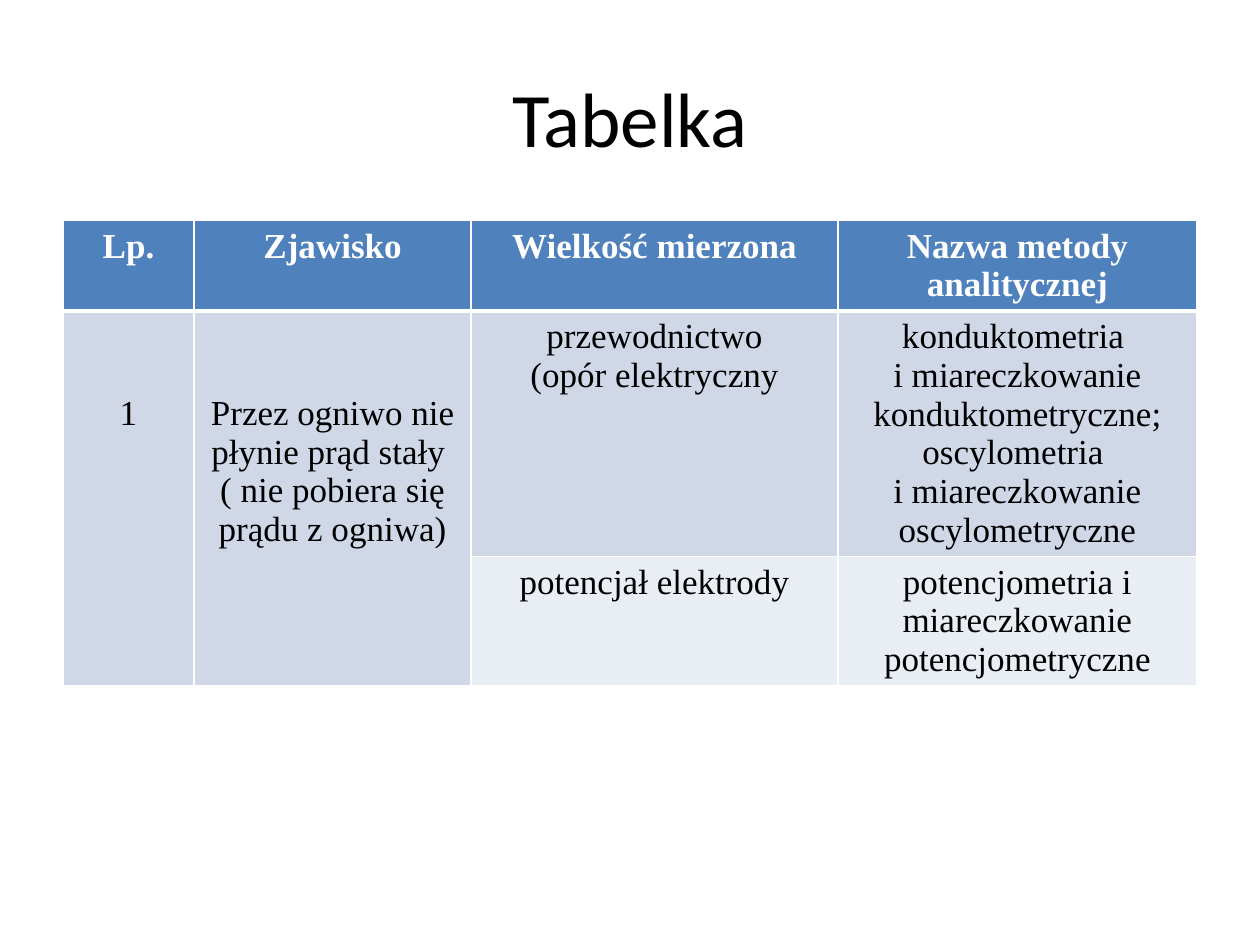
from lxml import etree
from pptx import Presentation
from pptx.dml.color import RGBColor
from pptx.enum import text
from pptx.oxml import ns
from pptx.util import Inches, Pt

WHITE, BLACK = "FFFFFF", "000000"
HEADER_BLUE, BAND_DARK, BAND_LIGHT = "4F81BD", "D0D8E8", "E9EDF4"
COLUMN_WIDTHS = [1.04, 2.2, 2.91, 2.85]
ROW_HEIGHTS = [0.71, 1.95, 1.02]
LOWERED_MARGIN = 0.66
HEADINGS = ["Lp.", "Zjawisko", "Wielkość mierzona", "Nazwa metody analitycznej"]
FIRST_METHOD = [
    ["1"],
    ["Przez ogniwo nie płynie prąd stały ", "( nie pobiera się prądu z ogniwa)"],
    ["przewodnictwo", "(opór elektryczny"],
    ["konduktometria ", "i miareczkowanie konduktometryczne; oscylometria ",
     "i miareczkowanie oscylometryczne"],
]
SECOND_METHOD = [
    ["potencjał elektrody"],
    ["potencjometria i miareczkowanie potencjometryczne"],
]


def colour(value):
    """Turn a hex string into a colour."""
    return RGBColor.from_string(value)


def add_span(para, words, font, size, ink, bold=False):
    """Add one centred, formatted run to a paragraph."""
    para.alignment = text.PP_ALIGN.CENTER
    span = para.add_run()
    span.text = words
    span.font.name = font
    span.font.size = Pt(size)
    span.font.bold = bold
    span.font.color.rgb = colour(ink)


def set_borders(cell, bottom=1):
    """Draw white lines around a cell, with a chosen bottom width."""
    properties = cell._tc.get_or_add_tcPr()
    widths = {"a:lnL": 1, "a:lnR": 1, "a:lnT": 1, "a:lnB": bottom}
    for position, (tag, width) in enumerate(widths.items()):
        line = etree.Element(ns.qn(tag), w=str(Pt(width)))
        fill = etree.SubElement(line, ns.qn("a:solidFill"))
        etree.SubElement(fill, ns.qn("a:srgbClr"), val=WHITE)
        properties.insert(position, line)


def fill_cell(cell, lines, shade, header=False):
    """Shade a cell, border it and write its paragraphs."""
    cell.fill.solid()
    cell.fill.fore_color.rgb = colour(shade)
    set_borders(cell, 3 if header else 1)
    frame = cell.text_frame
    for number, words in enumerate(lines):
        para = frame.add_paragraph() if number else frame.paragraphs[0]
        add_span(para, words, "Times New Roman", 20, WHITE if header else BLACK, header)


def add_title(page, words):
    """Place and write the slide title."""
    box = page.shapes.title
    box.left, box.top = Inches(0.5), Inches(0.3)
    box.width, box.height = Inches(9), Inches(1.25)
    box.text_frame.vertical_anchor = text.MSO_ANCHOR.MIDDLE
    add_span(box.text_frame.paragraphs[0], words, "Calibri", 44, BLACK)


def add_methods_table(page):
    """Build the table of phenomena, quantities and methods."""
    frame = page.shapes.add_table(
        len(ROW_HEIGHTS), len(COLUMN_WIDTHS), Inches(0.5), Inches(1.75),
        Inches(sum(COLUMN_WIDTHS)), Inches(sum(ROW_HEIGHTS)))
    table = frame.table
    for column, width in zip(table.columns, COLUMN_WIDTHS):
        column.width = Inches(width)
    for row, height in zip(table.rows, ROW_HEIGHTS):
        row.height = Inches(height)
    for index, heading in enumerate(HEADINGS):
        fill_cell(table.cell(0, index), [heading], HEADER_BLUE, header=True)
    for index, lines in enumerate(FIRST_METHOD):
        fill_cell(table.cell(1, index), lines, BAND_DARK)
    for index, lines in enumerate(SECOND_METHOD, start=2):
        fill_cell(table.cell(2, index), lines, BAND_LIGHT)
    for index in range(2):
        fill_cell(table.cell(2, index), [], BAND_DARK)
        table.cell(1, index).merge(table.cell(2, index))
        table.cell(1, index).margin_top = Inches(LOWERED_MARGIN)


def main():
    """Create and save the slide."""
    deck = Presentation()
    deck.slide_width, deck.slide_height = Inches(10), Inches(7.5)
    page = deck.slides.add_slide(deck.slide_layouts[5])
    add_title(page, "Tabelka")
    add_methods_table(page)
    deck.save("out.pptx")


if __name__ == "__main__":
    main()
